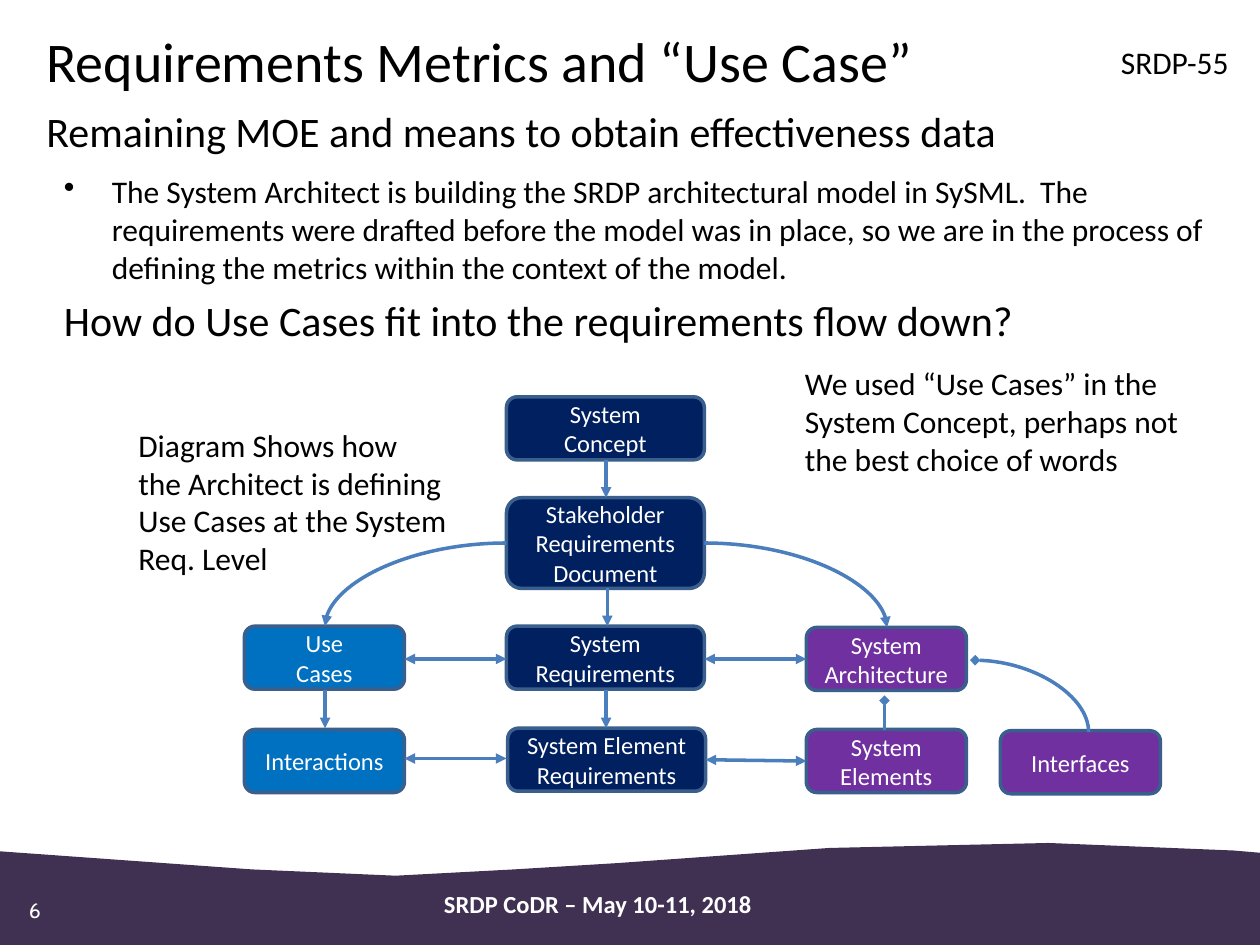
"""Build the slide on requirements metrics and the use case flow down."""
import dataclasses
import typing

import lxml.etree
import pptx
import pptx.dml.color
import pptx.enum.shapes
import pptx.enum.text
import pptx.oxml.ns
import pptx.util

Inches = pptx.util.Inches
Pt = pptx.util.Pt
Align = pptx.enum.text.PP_ALIGN
Point = tuple[float, float]


@dataclasses.dataclass(frozen=True)
class Theme:
    font: str = "Calibri"
    number_font: str = "Cabin"
    ink: str = "000000"
    paper: str = "FFFFFF"
    wave: str = "403152"
    requirement: str = "002060"
    use_case: str = "0070C0"
    architecture: str = "7030A0"
    outline: str = "3A5F8C"
    arrow: str = "4B7EBC"
    title: float = 32
    heading: float = 24
    body: float = 18
    label: float = 14
    number: float = 12
    stroke: float = 2


THEME = Theme()


class Line(typing.NamedTuple):
    text: str
    size: float = THEME.body
    bullet: bool = False


class Caption(typing.NamedTuple):
    left: float
    top: float
    width: float
    height: float
    lines: list[Line]
    align: Align = Align.LEFT
    color: str = THEME.ink
    bold: bool = False
    font: str = THEME.font
    wrap: bool = True
    inset: bool = True
    gap: float = 0


class Node(typing.NamedTuple):
    left: float
    top: float
    width: float
    height: float
    color: str
    lines: list[str]


class Link(typing.NamedTuple):
    start: Point
    end: Point
    head: str = "none"
    tail: str = "triangle"
    curved: bool = False


def rgb(value: str) -> pptx.dml.color.RGBColor:
    return pptx.dml.color.RGBColor.from_string(value)


def add_bullet(paragraph) -> None:
    properties = paragraph._p.get_or_add_pPr()
    properties.set("marL", str(Inches(0.38)))
    properties.set("indent", str(Inches(-0.38)))
    mark = lxml.etree.SubElement(properties, pptx.oxml.ns.qn("a:buChar"))
    mark.set("char", "•")


def write(frame, lines: list[Line], align: Align, color: str, bold: bool = False,
          font: str = THEME.font, gap: float = 0) -> None:
    for index, line in enumerate(lines):
        paragraph = frame.add_paragraph() if index else frame.paragraphs[0]
        if line.bullet:
            add_bullet(paragraph)
        paragraph.alignment = align
        if index and gap:
            paragraph.space_before = Pt(gap)
        run = paragraph.add_run()
        run.text = line.text
        run.font.name = font
        run.font.size = Pt(line.size)
        run.font.bold = bold
        run.font.color.rgb = rgb(color)


def draw_caption(slide, caption: Caption) -> None:
    frame = slide.shapes.add_textbox(*map(Inches, caption[:4])).text_frame
    frame.word_wrap = caption.wrap
    if not caption.inset:
        frame.margin_left = frame.margin_right = 0
        frame.margin_top = frame.margin_bottom = 0
    write(frame, caption.lines, caption.align, caption.color, caption.bold,
          caption.font, caption.gap)


def draw_node(slide, node: Node) -> None:
    box = slide.shapes.add_shape(
        pptx.enum.shapes.MSO_SHAPE.ROUNDED_RECTANGLE, *map(Inches, node[:4]))
    box.shadow.inherit = False
    box.fill.solid()
    box.fill.fore_color.rgb = rgb(node.color)
    box.line.color.rgb = rgb(THEME.outline)
    box.line.width = Pt(THEME.stroke)
    box.text_frame.word_wrap = True
    box.text_frame.vertical_anchor = pptx.enum.text.MSO_ANCHOR.MIDDLE
    labels = [Line(text, THEME.label) for text in node.lines]
    write(box.text_frame, labels, Align.CENTER, THEME.paper)


def draw_link(slide, link: Link) -> None:
    kinds = pptx.enum.shapes.MSO_CONNECTOR
    connector = slide.shapes.add_connector(
        kinds.CURVE if link.curved else kinds.STRAIGHT,
        *map(Inches, link.start + link.end))
    connector.line.color.rgb = rgb(THEME.arrow)
    connector.line.width = Pt(THEME.stroke)
    qn = pptx.oxml.ns.qn
    properties = connector._element.spPr
    if link.curved:
        properties.find(qn("a:prstGeom")).set("prst", "curvedConnector2")
    stroke = properties.find(qn("a:ln"))
    for tag, ending in (("a:headEnd", link.head), ("a:tailEnd", link.tail)):
        lxml.etree.SubElement(stroke, qn(tag)).set("type", ending)
    lxml.etree.SubElement(properties, qn("a:effectLst"))


def draw_wave(slide, outline: list[Point]) -> None:
    points = [(Inches(x), Inches(y)) for x, y in outline]
    builder = slide.shapes.build_freeform(*points[0], scale=1.0)
    builder.add_line_segments(points[1:], close=True)
    wave = builder.convert_to_shape()
    wave.shadow.inherit = False
    wave.fill.solid()
    wave.fill.fore_color.rgb = rgb(THEME.wave)
    wave.line.fill.background()


WAVE = [(-0.09, 6.75), (2, 6.9), (3.14, 6.95), (4.08, 6.9), (4.9, 6.85), (6.58, 6.73),
        (8.32, 6.69), (9.79, 6.75), (10.14, 6.78), (10.13, 7.6), (-0.07, 7.58)]

CAPTIONS = [
    Caption(0.23, 7.12, 4.12, 0.24, [Line("6", THEME.number)], color=THEME.paper,
            font=THEME.number_font, inset=False),
    Caption(1.9, 7.01, 5.69, 0.42, [Line("SRDP CoDR – May 10-11, 2018", THEME.label)],
            Align.CENTER, THEME.paper, bold=True),
    Caption(0.27, 0.16, 9.44, 0.52,
            [Line("Requirements Metrics and “Use Case”", THEME.title)]),
    Caption(0.41, 1.32, 9.44, 1.5, [
        Line("The System Architect is building the SRDP architectural model in SySML.  "
             "The requirements were drafted before the model was in place, so we are in "
             "the process of defining the metrics within the context of the model.",
             bullet=True),
        Line("How do Use Cases fit into the requirements flow down?", THEME.heading),
    ], gap=5),
    Caption(7.65, 0.29, 2.2, 0.4, [Line("SRDP-55")], Align.RIGHT),
    Caption(0.27, 0.79, 9.44, 0.53,
            [Line("Remaining MOE and means to obtain effectiveness data", THEME.heading)]),
    Caption(1, 3.33, 2.79, 1.31, [
        Line("Diagram Shows how"), Line("the Architect is defining"),
        Line("Use Cases at the System"), Line("Req. Level")], wrap=False),
    Caption(6.29, 2.84, 3.2, 1.01, [
        Line("We used “Use Cases” in the"), Line("System Concept, perhaps not"),
        Line("the best choice of words")], wrap=False),
]

NODES = [
    Node(4.02, 3.15, 1.57, 0.5, THEME.requirement, ["System", "Concept"]),
    Node(4.02, 3.95, 1.57, 0.72, THEME.requirement,
         ["Stakeholder", "Requirements", "Document"]),
    Node(4.02, 4.97, 1.57, 0.5, THEME.requirement, ["System", "Requirements"]),
    Node(4.03, 5.78, 1.57, 0.5, THEME.requirement, ["System Element", "Requirements"]),
    Node(1.94, 4.97, 1.27, 0.5, THEME.use_case, ["Use", "Cases"]),
    Node(1.94, 5.79, 1.27, 0.5, THEME.use_case, ["Interactions"]),
    Node(6.4, 4.98, 1.27, 0.5, THEME.architecture, ["System Architecture"]),
    Node(6.4, 5.79, 1.27, 0.5, THEME.architecture, ["System Elements"]),
    Node(7.94, 5.8, 1.27, 0.5, THEME.architecture, ["Interfaces"]),
]

LINKS = [
    Link((4.81, 3.65), (4.81, 3.95)),
    Link((4.82, 4.67), (4.82, 4.97)),
    Link((4.81, 5.48), (4.81, 5.78)),
    Link((2.58, 5.48), (2.58, 5.78)),
    Link((3.21, 5.23), (4.02, 5.23), head="triangle"),
    Link((3.21, 6.02), (4.02, 6.02), head="triangle"),
    Link((6.4, 5.23), (5.59, 5.23), head="triangle"),
    Link((6.4, 6.04), (5.6, 6.03), head="triangle"),
    Link((7.02, 5.56), (7.02, 5.79), head="diamond", tail="none"),
    Link((5.59, 4.31), (7.04, 4.98), curved=True),
    Link((4.02, 4.31), (2.58, 4.97), curved=True),
    Link((7.74, 5.24), (8.64, 5.81), head="diamond", tail="none", curved=True),
]


def main() -> None:
    deck = pptx.Presentation()
    deck.slide_width, deck.slide_height = Inches(10), Inches(7.5)
    slide = deck.slides.add_slide(deck.slide_layouts[6])
    draw_wave(slide, WAVE)
    for node in NODES:
        draw_node(slide, node)
    for link in LINKS:
        draw_link(slide, link)
    for caption in CAPTIONS:
        draw_caption(slide, caption)
    deck.save("out.pptx")


if __name__ == "__main__":
    main()
